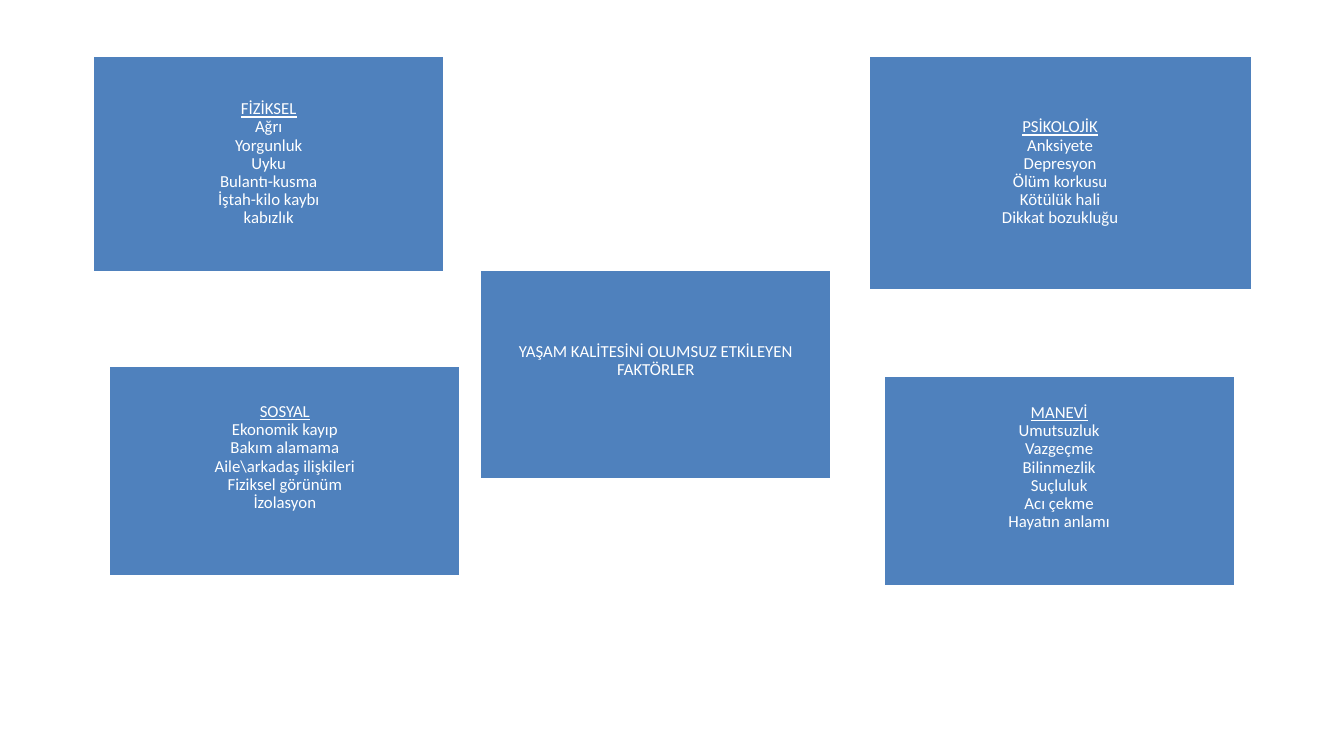
from pptx import Presentation
from pptx.dml.color import RGBColor
from pptx.enum import shapes, text
from pptx.util import Inches, Pt

WHITE, BLUE = "FFFFFF", "4F81BD"
INSET = 0.05
RAISED = 0.32  # bottom inset that lifts the text above the middle

CENTRE = ((4.76, 2.67, 3.49, 2.09), "YAŞAM KALİTESİNİ OLUMSUZ ETKİLEYEN FAKTÖRLER")

# Box, bottom inset, heading, factors
FACTOR_GROUPS = [
    ((0.92, 0.55, 3.49, 2.15), INSET, "FİZİKSEL",
     ["Ağrı", "Yorgunluk", "Uyku", "Bulantı-kusma", "İştah-kilo kaybı", "kabızlık"]),
    ((8.61, 0.55, 3.81, 2.33), INSET, "PSİKOLOJİK",
     ["Anksiyete", "Depresyon", "Ölüm korkusu", "Kötülük hali", "Dikkat bozukluğu"]),
    ((1.08, 3.63, 3.49, 2.09), RAISED, "SOSYAL",
     ["Ekonomik kayıp", "Bakım alamama", "Aile\\arkadaş ilişkileri",
      "Fiziksel görünüm", "İzolasyon"]),
    ((8.76, 3.73, 3.49, 2.09), RAISED, "MANEVİ",
     ["Umutsuzluk", "Vazgeçme", "Bilinmezlik", "Suçluluk", "Acı çekme",
      "Hayatın anlamı"]),
]


def colour(value):
    return RGBColor.from_string(value)


def write_line(paragraph, wording, size=12, underline=False, ink=WHITE):
    paragraph.alignment = text.PP_ALIGN.CENTER
    paragraph.line_spacing = 0.9
    run = paragraph.add_run()
    run.text = wording
    run.font.name = "Calibri"
    run.font.size = Pt(size)
    run.font.underline = underline
    run.font.color.rgb = colour(ink)


def add_panel(slide, box, bottom):
    """Draw a blue panel and return its empty text frame."""
    panel = slide.shapes.add_shape(
        shapes.MSO_SHAPE.RECTANGLE, *(Inches(length) for length in box))
    panel.shadow.inherit = False
    panel.fill.solid()
    panel.fill.fore_color.rgb = colour(BLUE)
    panel.line.color.rgb = colour(WHITE)
    panel.line.width = Pt(2)
    frame = panel.text_frame
    frame.word_wrap = True
    frame.vertical_anchor = text.MSO_ANCHOR.MIDDLE
    frame.margin_left = frame.margin_right = frame.margin_top = Inches(INSET)
    frame.margin_bottom = Inches(bottom)
    return frame


def add_centre(slide, box, title):
    frame = add_panel(slide, box, RAISED)
    write_line(frame.paragraphs[0], title)


def add_factor_group(slide, box, bottom, heading, factors):
    frame = add_panel(slide, box, bottom)
    write_line(frame.paragraphs[0], heading, underline=True)
    for factor in factors:
        write_line(frame.add_paragraph(), factor)


def main():
    deck = Presentation()
    deck.slide_width, deck.slide_height = Inches(13.33), Inches(7.5)
    slide = deck.slides.add_slide(deck.slide_layouts[6])

    # Central topic, then the four groups around it
    add_centre(slide, *CENTRE)
    for group in FACTOR_GROUPS:
        add_factor_group(slide, *group)

    deck.save("out.pptx")


if __name__ == "__main__":
    main()
